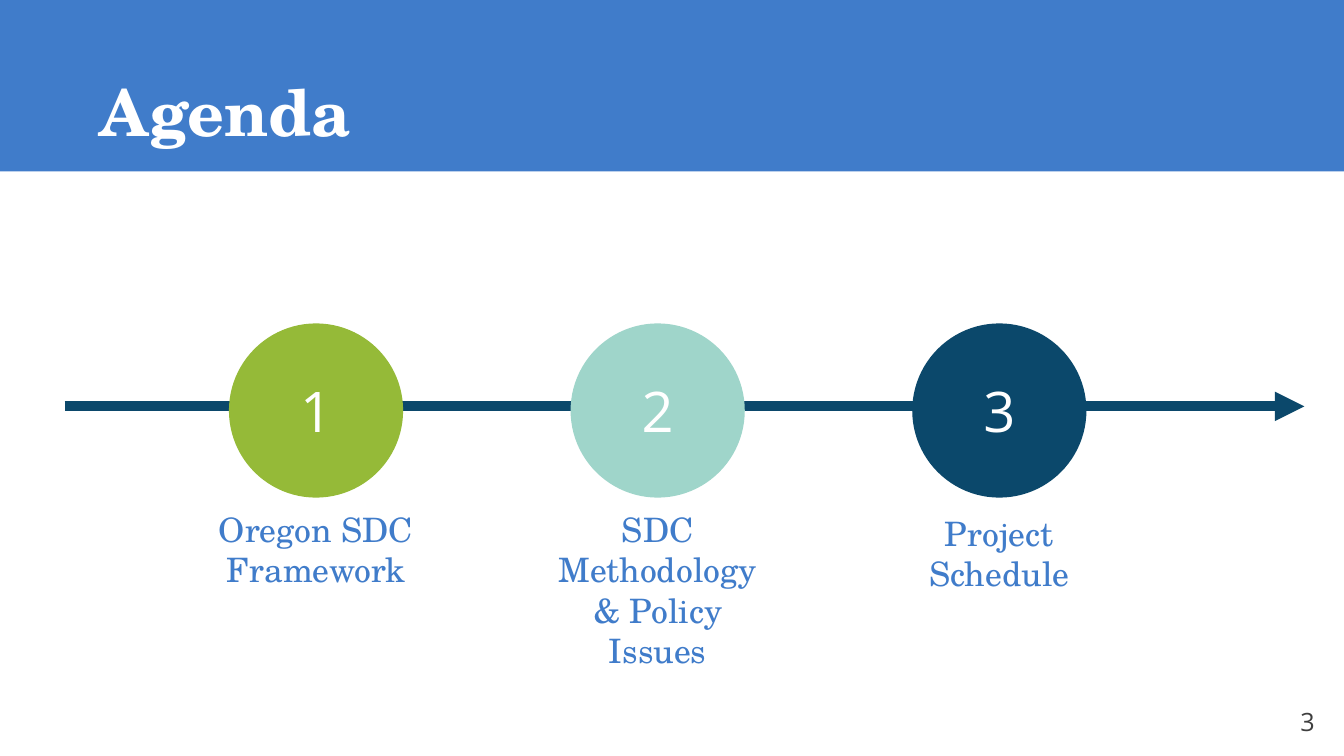
from lxml import etree
from pptx import Presentation
from pptx.dml.color import RGBColor
from pptx.enum.shapes import MSO_CONNECTOR, MSO_SHAPE
from pptx.enum.text import MSO_ANCHOR, PP_ALIGN
from pptx.oxml.ns import qn
from pptx.util import Cm, Pt

BLUE = RGBColor(0x40, 0x7C, 0xCA)
NAVY = RGBColor(0x0B, 0x48, 0x6B)
GREEN = RGBColor(0x95, 0xBA, 0x38)
MINT = RGBColor(0x9F, 0xD5, 0xCA)
WHITE = RGBColor(0xFF, 0xFF, 0xFF)
GRAY = RGBColor(0x3F, 0x3F, 0x3F)

SERIF = "TeX Gyre Schola"
SANS = "Open Sans"

SLIDE_WIDTH, SLIDE_HEIGHT = 33.87, 19.05
CIRCLE_SIZE = 4.39
STEP_PITCH = 8.61

# Circle colour, label, label width, label drop below the circle
STEPS = [
    (GREEN, "Oregon SDC Framework", 5.59, 0.16),
    (MINT, "SDC Methodology & Policy Issues", 6.15, 0.16),
    (NAVY, "Project Schedule", 5.66, 0.26),
]


def write(shape, text, *, size, color, font=SERIF, bold=False,
          align=PP_ALIGN.CENTER, anchor=MSO_ANCHOR.TOP):
    frame = shape.text_frame
    frame.word_wrap = True
    frame.vertical_anchor = anchor
    paragraph = frame.paragraphs[0]
    paragraph.alignment = align
    run = paragraph.add_run()
    run.text = text
    run.font.name = font
    run.font.size = Pt(size)
    run.font.bold = bold
    run.font.color.rgb = color


def add_text(slide, left, top, width, height, text, **style):
    box = slide.shapes.add_textbox(Cm(left), Cm(top), Cm(width), Cm(height))
    write(box, text, **style)


def add_filled(slide, preset, left, top, width, height, color):
    shape = slide.shapes.add_shape(preset, Cm(left), Cm(top), Cm(width), Cm(height))
    shape.shadow.inherit = False
    shape.fill.solid()
    shape.fill.fore_color.rgb = color
    shape.line.fill.background()
    return shape


def add_header(slide, left, top, width, height):
    add_filled(slide, MSO_SHAPE.RECTANGLE, left, top, width, height, BLUE)
    add_text(slide, left + 2.26, top + 2.08, 23.52, 3.66, "Agenda",
             size=46, color=WHITE, bold=True, align=PP_ALIGN.LEFT)


def add_arrow(slide, left, right, y):
    arrow = slide.shapes.add_connector(
        MSO_CONNECTOR.STRAIGHT, Cm(left), Cm(y), Cm(right), Cm(y))
    arrow.line.color.rgb = NAVY
    arrow.line.width = Pt(7)
    etree.SubElement(arrow.line._get_or_add_ln(), qn("a:tailEnd"), type="triangle")
    etree.SubElement(arrow._element.spPr, qn("a:effectLst"))


def add_step(slide, left, top, number, color, label, label_width, label_drop):
    circle = add_filled(slide, MSO_SHAPE.OVAL, left, top, CIRCLE_SIZE, CIRCLE_SIZE, color)
    write(circle, str(number), size=40, color=WHITE, font=SANS, anchor=MSO_ANCHOR.MIDDLE)
    add_text(slide, left + (CIRCLE_SIZE - label_width) / 2, top + CIRCLE_SIZE + label_drop,
             label_width, 2.31, label, size=24, color=BLUE)


def add_timeline(slide, left, top, width):
    add_arrow(slide, left, left + width, top + 2.09)
    for index, step in enumerate(STEPS):
        add_step(slide, left + 4.14 + index * STEP_PITCH, top, index + 1, *step)


def add_page_number(slide, left, top, width, height):
    add_text(slide, left, top, width, height, "3", size=18, color=GRAY, font=SANS)


def main():
    deck = Presentation()
    deck.slide_width, deck.slide_height = Cm(SLIDE_WIDTH), Cm(SLIDE_HEIGHT)
    agenda = deck.slides.add_slide(deck.slide_layouts[6])

    # Title band
    add_header(agenda, 0, -0.38, SLIDE_WIDTH, 4.7)
    # Numbered steps along the arrow
    add_timeline(agenda, 1.63, 8.15, 31.24)
    # Footer
    add_page_number(agenda, 32.05, 17.68, 1.8, 1.02)

    deck.save("out.pptx")


if __name__ == "__main__":
    main()
